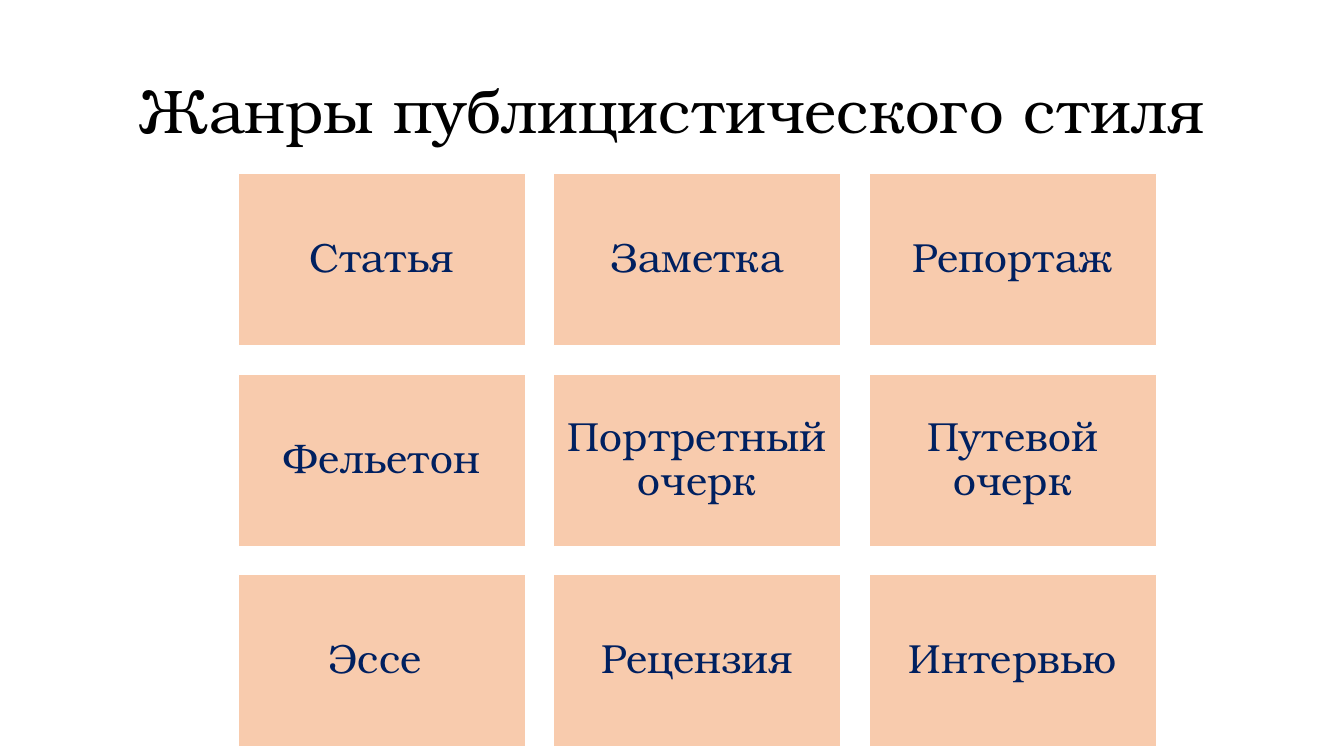
from pptx import Presentation
from pptx.dml.color import RGBColor
from pptx.enum.shapes import MSO_SHAPE
from pptx.enum.text import MSO_ANCHOR, PP_ALIGN
from pptx.util import Inches, Pt

TITLE = "Жанры публицистического стиля"
GENRES = [
    ["Статья", "Заметка", "Репортаж"],
    ["Фельетон", "Портретный очерк", "Путевой очерк"],
    ["Эссе ", "Рецензия", "Интервью"],
]

FONT = "TeX Gyre Bonum"
BLACK = RGBColor(0x00, 0x00, 0x00)
WHITE = RGBColor(0xFF, 0xFF, 0xFF)
PEACH = RGBColor(0xF8, 0xCB, 0xAD)
NAVY = RGBColor(0x00, 0x20, 0x60)
RECTANGLE = MSO_SHAPE.RECTANGLE
MIDDLE = MSO_ANCHOR.MIDDLE
CENTER = PP_ALIGN.CENTER

GRID_LEFT, GRID_TOP = 2.36, 1.72
CARD_WIDTH, CARD_HEIGHT = 2.85, 1.71
GAP = 0.28
INSET = Inches(0.12)


def write(frame, text, size, color):
    frame.text = text
    frame.word_wrap = True
    frame.vertical_anchor = MIDDLE
    paragraph = frame.paragraphs[0]
    paragraph.alignment = CENTER
    paragraph.line_spacing = 0.9
    paragraph.font.name = FONT
    paragraph.font.size = Pt(size)
    paragraph.font.color.rgb = color


def add_genre(slide, genre, row, column):
    card = slide.shapes.add_shape(
        RECTANGLE,
        Inches(GRID_LEFT + column * (CARD_WIDTH + GAP)),
        Inches(GRID_TOP + row * (CARD_HEIGHT + GAP)),
        Inches(CARD_WIDTH),
        Inches(CARD_HEIGHT),
    )
    card.shadow.inherit = False
    card.fill.solid()
    card.fill.fore_color.rgb = PEACH
    card.line.color.rgb = WHITE
    card.line.width = Pt(1)
    frame = card.text_frame
    frame.margin_left = frame.margin_right = INSET
    frame.margin_top = frame.margin_bottom = INSET
    write(frame, genre, 29, NAVY)


def main():
    deck = Presentation()
    deck.slide_width = Inches(13.33)
    deck.slide_height = Inches(7.5)
    slide = deck.slides.add_slide(deck.slide_layouts[5])

    title = slide.shapes.title
    title.left, title.top = Inches(0.92), Inches(0.4)
    title.width, title.height = Inches(11.5), Inches(1.45)
    write(title.text_frame, TITLE, 44, BLACK)

    for row, genres in enumerate(GENRES):
        for column, genre in enumerate(genres):
            add_genre(slide, genre, row, column)

    deck.save("out.pptx")


if __name__ == "__main__":
    main()
